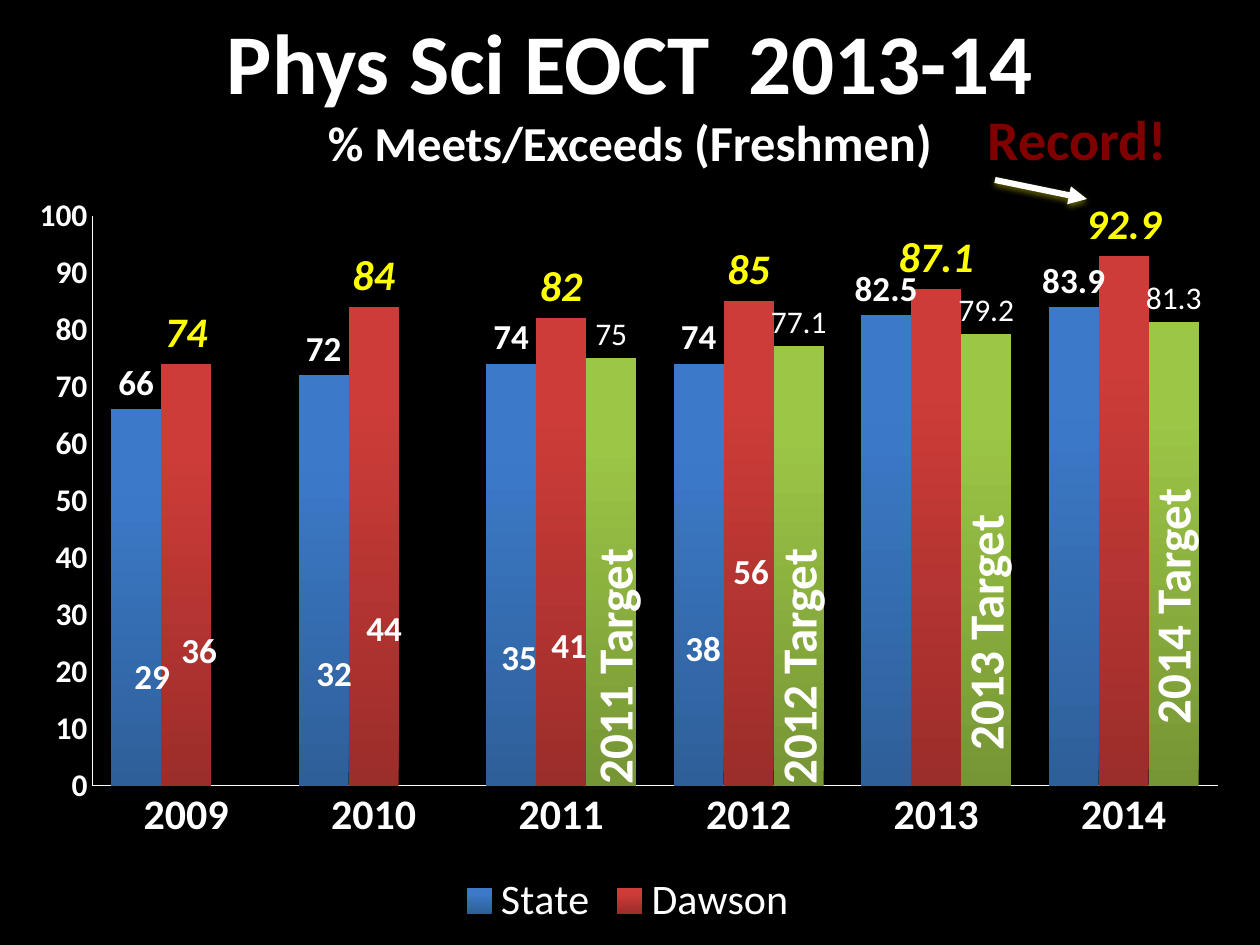
from lxml.etree import SubElement
from pptx import Presentation
from pptx.chart.data import CategoryChartData
from pptx.dml.color import RGBColor
from pptx.enum.chart import XL_CHART_TYPE, XL_LABEL_POSITION, XL_LEGEND_POSITION, XL_TICK_MARK
from pptx.enum.shapes import MSO_CONNECTOR
from pptx.enum.text import MSO_ANCHOR, MSO_AUTO_SIZE, PP_ALIGN
from pptx.oxml import parse_xml
from pptx.oxml.ns import nsdecls, qn
from pptx.util import Pt

COLORS = {
    "black": "000000", "white": "FFFFFF", "yellow": "FFFF00", "maroon": "800000",
    "blue": "3C7AC9", "blue_dark": "2E5F99",
    "red": "CD3C38", "red_dark": "9B2D2A",
    "green": "9CC646", "green_dark": "769535",
}
EMU_PER_PX = 914400 / 126


def px(*values):
    return [round(v * EMU_PER_PX) for v in values]


def rgb(name):
    return RGBColor.from_string(COLORS[name])


class SlideBuilder:
    font_name = "Calibri"

    def __init__(self, prs):
        self.s = prs.slides.add_slide(prs.slide_layouts[5])
        fill = self.s.background.fill
        fill.solid()
        fill.fore_color.rgb = rgb("black")

    def style(self, font, color="white", **values):
        for name, value in {"name": self.font_name, "bold": False, **values}.items():
            setattr(font, name, Pt(value) if name == "size" else value)
        font.color.rgb = rgb(color)

    def title(self, box, lines):
        sp = self.s.shapes.title
        sp.left, sp.top, sp.width, sp.height = px(*box)
        tf = sp.text_frame
        tf.auto_size = MSO_AUTO_SIZE.NONE
        tf.vertical_anchor = MSO_ANCHOR.MIDDLE
        p = tf.paragraphs[0]
        p.alignment = PP_ALIGN.CENTER
        for i, line in enumerate(lines):
            if i:
                p.add_line_break()
            for text, size in line:
                r = p.add_run()
                r.text = text
                self.style(r.font, size=size, bold=True)

    def text(self, box, text, size, color="white", vertical=False):
        sp = self.s.shapes.add_textbox(*px(*box))
        tf = sp.text_frame
        tf.word_wrap = vertical
        tf.auto_size = MSO_AUTO_SIZE.SHAPE_TO_FIT_TEXT
        if vertical:
            tf.vertical_anchor = MSO_ANCHOR.MIDDLE
            sp.element.txBody.find(qn("a:bodyPr")).set("vert", "vert270")
        r = tf.paragraphs[0].add_run()
        r.text = text
        self.style(r.font, color, size=size, bold=True)

    def arrow(self, start, end):
        cx = self.s.shapes.add_connector(MSO_CONNECTOR.STRAIGHT, *px(*start, *end))
        cx.line.width = Pt(3.5)
        cx.line.color.rgb = rgb("white")
        SubElement(cx.line._get_or_add_ln(), qn("a:tailEnd"), type="triangle")
        cx.element.spPr.append(parse_xml(
            f'<a:effectLst {nsdecls("a")}><a:outerShdw blurRad="{Pt(3.6)}" dist="{Pt(1.6)}" '
            f'dir="5400000" rotWithShape="0"><a:srgbClr val="{COLORS["yellow"]}">'
            '<a:alpha val="38000"/></a:srgbClr></a:outerShdw></a:effectLst>'))

    def axis(self, axis, size):
        axis.has_major_gridlines = False
        axis.major_tick_mark = axis.minor_tick_mark = XL_TICK_MARK.NONE
        axis.format.line.color.rgb = rgb("white")
        self.style(axis.tick_labels.font, size=size, bold=True)

    def chart(self, box, plot_box, categories, series):
        data = CategoryChartData()
        data.categories = categories
        for name, values, _, _ in series:
            data.add_series(name, values)
        chart = self.s.shapes.add_chart(XL_CHART_TYPE.COLUMN_CLUSTERED, *px(*box), data).chart
        chart.has_title = False
        self.style(chart.font, size=18)
        self.axis(chart.category_axis, 24)
        self.axis(chart.value_axis, 18)
        for name, value in {"minimum_scale": 0, "maximum_scale": 100, "major_unit": 10}.items():
            setattr(chart.value_axis, name, value)

        plot = chart.plots[0]
        plot.gap_width = 75
        plot.overlap = 0
        plot.vary_by_categories = False
        for ser, (_, _, color, label_font) in zip(plot.series, series):
            fill = ser.format.fill
            fill.gradient()
            fill.gradient_angle = 90
            stops = fill.gradient_stops
            for stop, name, position in zip(stops, (color + "_dark", color), (0, 0.8)):
                stop.color.rgb = rgb(name)
                stop.position = position
            labels = ser.data_labels
            labels.show_value = True
            labels.position = XL_LABEL_POSITION.OUTSIDE_END
            self.style(labels.font, **label_font)

        chart.has_legend = True
        legend = chart.legend
        legend.position = XL_LEGEND_POSITION.BOTTOM
        legend.include_in_layout = False
        self.style(legend.font, size=24)
        legend_pos = legend._element.find(qn("c:legendPos"))
        legend_pos.addnext(parse_xml(
            f'<c:legendEntry {nsdecls("c")}><c:idx val="2"/><c:delete val="1"/></c:legendEntry>'))

        left, top, width, height = box
        x, y, w, h = plot_box
        fractions = {"x": (x - left) / width, "y": (y - top) / height, "w": w / width, "h": h / height}
        area = chart._chartSpace.chart.plotArea
        for old in area.findall(qn("c:layout")):
            area.remove(old)
        sizes = "".join(f'<c:{k} val="{v:.3f}"/>' for k, v in fractions.items())
        area.insert(0, parse_xml(
            f'<c:layout {nsdecls("c")}><c:manualLayout><c:layoutTarget val="inner"/>'
            f'<c:xMode val="edge"/><c:yMode val="edge"/>{sizes}</c:manualLayout></c:layout>'))


def main():
    prs = Presentation()
    prs.slide_width, prs.slide_height = px(1260, 945)
    b = SlideBuilder(prs)
    b.title((63, 0, 1134, 181), [
        [("Phys Sci EOCT  2013-14", 48.6)],
        [("% Meets/Exceeds ", 27.9), ("(Freshmen)", 28.8)],
    ])
    b.chart((14, 181, 1227, 754), (92, 216, 1125, 570),
            [str(year) for year in range(2009, 2015)], [
        ("State", (66, 72, 74, 74, 82.5, 83.9), "blue", {"size": 20, "bold": True}),
        ("Dawson", (74, 84, 82, 85, 87.1, 92.9), "red",
         {"size": 24, "bold": True, "italic": True, "color": "yellow"}),
        ("Series 3", (None, None, 75, 77.1, 79.2, 81.3), "green", {"size": 18}),
    ])
    for value, left, top in [
        (36, 169, 622), (29, 122, 648), (32, 304, 645), (44, 354, 600),
        (35, 489, 629), (41, 539, 617), (38, 673, 620), (56, 721, 543),
    ]:
        b.text((left, top, 62, 55), str(value), 20)
    b.arrow((995, 180), (1087, 199))
    b.text((975, 98, 209, 81), "Record!", 32, "maroon")
    for year, left, top, height in [
        (2011, 571, 348, 449), (2012, 755, 348, 449),
        (2013, 942, 348, 415), (2014, 1129, 373, 364),
    ]:
        b.text((left, top, 84, height), f"{year} Target", 28, vertical=True)
    prs.save("out.pptx")


if __name__ == "__main__":
    main()
